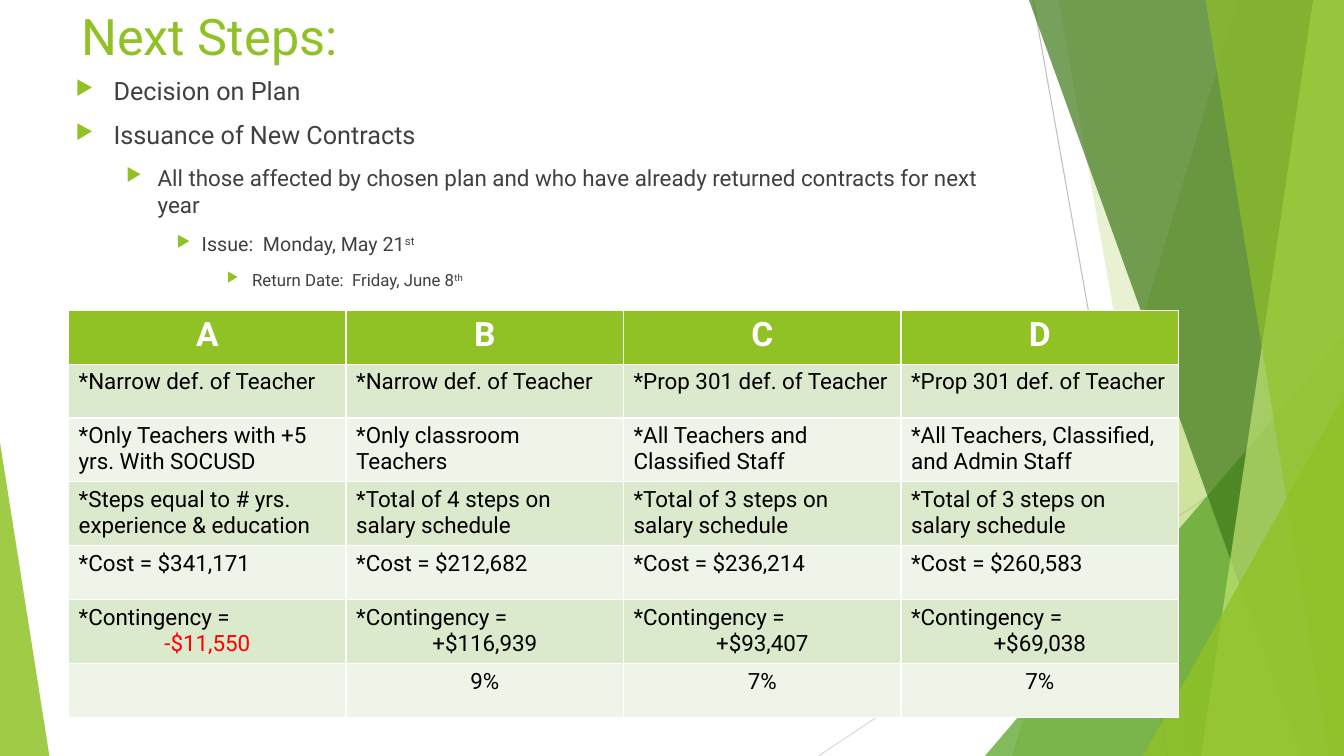
from lxml import etree
from pptx import Presentation
from pptx.dml.color import RGBColor
from pptx.enum import shapes, text
from pptx.oxml import ns
from pptx.util import Pt

HUES = {
    "lime": "90C226", "green": "54A021", "dark": "3F7819", "pale": "C0E474",
    "ink": "404040", "black": "000000", "white": "FFFFFF", "red": "FF0000",
    "grey": "BFBFBF", "mist": "D9D9D9", "band": "DBE9CD", "light": "EEF4E8",
}
WIDE, HIGH = 960, 540


class Page:
    """Draws styled elements on one slide, with lengths in points."""

    def __init__(self, slide, face):
        self.slide = slide
        self.items = slide.shapes
        self.face = face

    def hue(self, name):
        return RGBColor.from_string(HUES[name])

    def node(self, owner, tag, **attrs):
        return etree.SubElement(owner, ns.qn(tag), attrs)

    def font(self, para, size, hue, bold=False):
        font = para.font
        font.name, font.size, font.bold = self.face, Pt(size), bold
        font.color.rgb = self.hue(hue)

    def line(self, start, end, hue):
        ends = [Pt(v) for v in (*start, *end)]
        line = self.items.add_connector(shapes.MSO_CONNECTOR.STRAIGHT, *ends)
        line.line.color.rgb = self.hue(hue)
        line.line.width = Pt(0.75)
        self.node(line.element.spPr, "a:effectLst")

    def paint(self, shape, hue, alpha):
        shape.shadow.inherit = False
        shape.line.fill.background()
        shape.fill.solid()
        shape.fill.fore_color.rgb = self.hue(hue)
        color = shape.element.spPr.find(".//" + ns.qn("a:srgbClr"))
        self.node(color, "a:alpha", val=str(alpha * 1000))

    def panel(self, top, foot, hue, alpha):
        pen = self.items.build_freeform(Pt(top), 0)
        rest = [(WIDE, 0), (WIDE, HIGH), (foot, HIGH)]
        pen.add_line_segments([(Pt(x), Pt(y)) for x, y in rest], close=True)
        self.paint(pen.convert_to_shape(), hue, alpha)

    def wedge(self, left, top, width, peak, hue, alpha):
        box = [Pt(v) for v in (left, top, width, HIGH - top)]
        shape = self.items.add_shape(shapes.MSO_SHAPE.ISOSCELES_TRIANGLE, *box)
        shape.adjustments[0] = peak
        self.paint(shape, hue, alpha)

    def box(self, *place):
        frame = self.items.add_textbox(*[Pt(v) for v in place]).text_frame
        frame.word_wrap = True
        frame.vertical_anchor = text.MSO_ANCHOR.TOP
        return frame

    def title(self, words, place):
        para = self.box(*place).paragraphs[0]
        para.text = words
        self.font(para, 36, "lime")

    def bullet(self, para, level, left, hang):
        para.level = level
        para.space_before = Pt(10)
        props = para._p.get_or_add_pPr()
        props.set("marL", str(Pt(left)))
        props.set("indent", str(-Pt(hang)))
        tint = self.node(props, "a:buClr")
        self.node(tint, "a:srgbClr", val=HUES["lime"])
        self.node(props, "a:buSzPct", val="80000")
        self.node(props, "a:buChar", char="▶")

    def outline(self, rows, place):
        frame = self.box(*place)
        for i, (level, left, hang, size, words, raised) in enumerate(rows):
            para = frame.add_paragraph() if i else frame.paragraphs[0]
            self.bullet(para, level, left, hang)
            self.font(para, size, "ink")
            para.add_run().text = words
            if raised:
                run = para.add_run()
                run.text = raised
                run.font._element.set("baseline", "30000")

    def cell(self, cell, words, fill, size, hue, mid, bold):
        cell.fill.solid()
        cell.fill.fore_color.rgb = self.hue(fill)
        cell.text = words
        for i, para in enumerate(cell.text_frame.paragraphs):
            loss = para.text.startswith("-")
            self.font(para, size, "red" if loss else hue, bold)
            if mid or i:
                para.alignment = text.PP_ALIGN.CENTER

    def table(self, rows, left, top, width, step):
        size = len(rows), len(rows[0])
        place = [Pt(v) for v in (left, top, width, step * len(rows))]
        table = self.items.add_table(*size, *place).table
        table.horz_banding = False
        for r, row in enumerate(rows):
            table.rows[r].height = Pt(step)
            look = ("band" if r % 2 else "light", 16, "black",
                    r == len(rows) - 1, False)
            if r == 0:
                look = "lime", 24, "white", True, True
            for c, words in enumerate(row):
                self.cell(table.cell(r, c), words, *look)


POINTS = [
    (0, 27, 27, 18, "Decision on Plan", ""),
    (0, 27, 27, 18, "Issuance of New Contracts", ""),
    (1, 58.5, 22.5, 16, "All those affected by chosen plan and who have "
     "already returned contracts for next year", ""),
    (2, 90, 18, 14, "Issue:  Monday, May 21", "st"),
    (3, 126, 18, 12, "Return Date:  Friday, June 8", "th"),
]

NARROW, PROP = "*Narrow def. of Teacher", "*Prop 301 def. of Teacher"
COSTS = ["341,171", "212,682", "236,214", "260,583"]
FUNDS = ["-$11,550", "+$116,939", "+$93,407", "+$69,038"]
PLANS = [
    list("ABCD"),
    [NARROW, NARROW, PROP, PROP],
    ["*Only Teachers with +5 yrs. With SOCUSD", "*Only classroom Teachers",
     "*All Teachers and Classified Staff",
     "*All Teachers, Classified, and Admin Staff"],
    ["*Steps equal to # yrs. experience & education"]
    + [f"*Total of {n} steps on salary schedule" for n in (4, 3, 3)],
    [f"*Cost = ${cost}" for cost in COSTS],
    [f"*Contingency =\n{fund}" for fund in FUNDS],
    ["", "9%", "7%", "7%"],
]


def main():
    deck = Presentation()
    deck.slide_width, deck.slide_height = Pt(WIDE), Pt(HIGH)
    page = Page(deck.slides.add_slide(deck.slide_layouts[6]), "Roboto")
    page.line((738, 0), (834, HIGH), "grey")
    page.line((WIDE, 290), (584.6, HIGH), "mist")
    page.panel(884, 723, "lime", 30)
    page.panel(756, 852, "lime", 20)
    page.wedge(703.5, 240, 256.5, 1, "green", 72)
    page.panel(735, 929.5, "dark", 70)
    page.panel(938, 858, "pale", 70)
    page.panel(861, 949, "lime", 65)
    page.wedge(816.5, 283, 143.5, 1, "lime", 80)
    page.wedge(0, 316, 35.3, 0, "lime", 85)
    page.title("Next Steps:", (51, 0, 677, 104))
    page.outline(POINTS, (47, 50.4, 677, 350))
    page.table(PLANS, 49, 221.6, 792.8, 38.5)
    deck.save("out.pptx")


if __name__ == "__main__":
    main()
